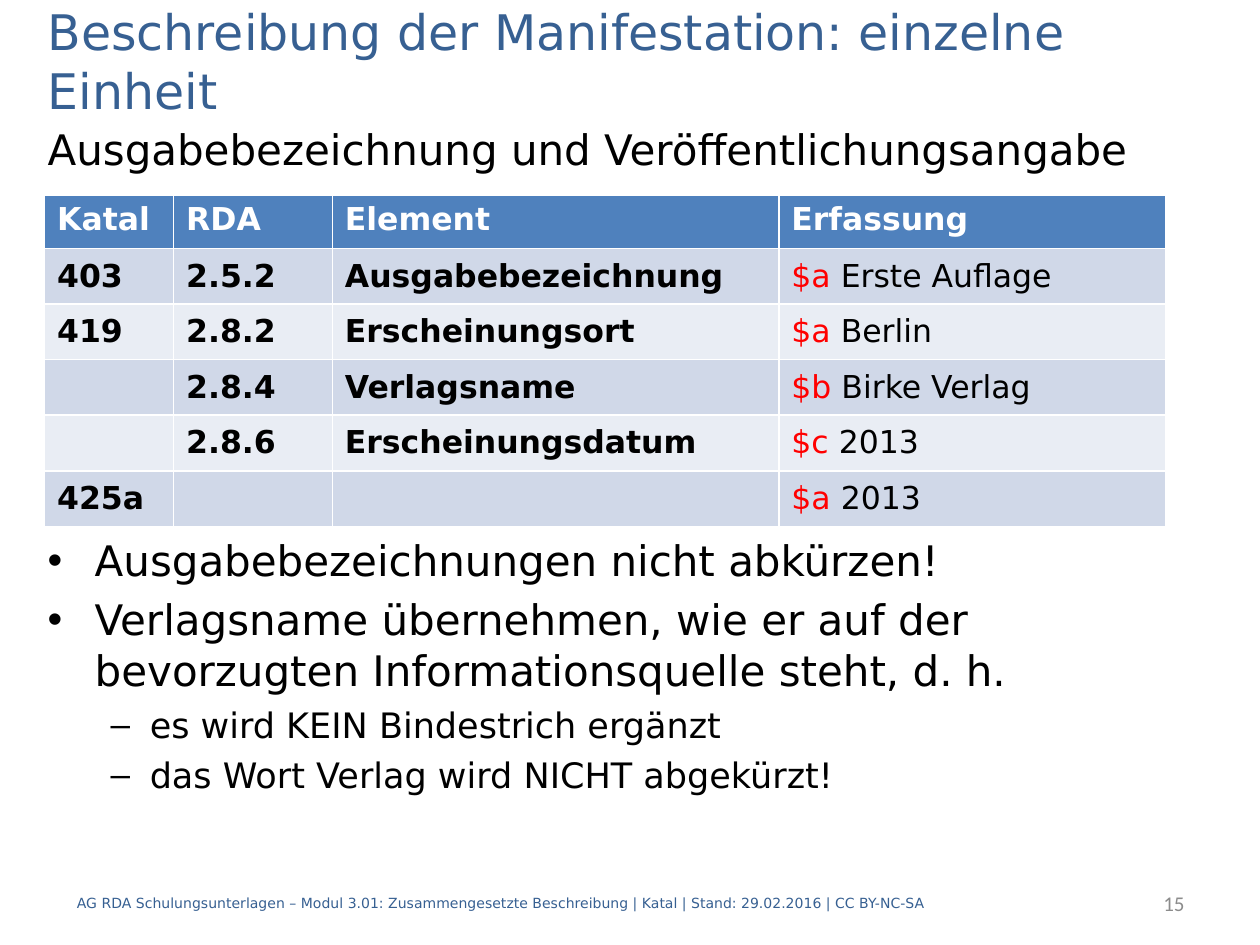
"""Build the slide on edition statement and publication statement."""
from dataclasses import dataclass

from lxml.etree import SubElement
from pptx import Presentation
from pptx.dml.color import RGBColor
from pptx.enum.text import MSO_ANCHOR, MSO_AUTO_SIZE, PP_ALIGN
from pptx.oxml.ns import qn
from pptx.util import Cm, Pt

FONT = "DejaVu Sans"
BLUE, BLACK, WHITE, RED, GREY = "376092", "000000", "FFFFFF", "FF0000", "8C8C8C"
HEADER_FILL, BAND_FILLS = "4F81BD", ("D0D8E8", "E9EDF4")


@dataclass(frozen=True)
class Box:
    """Place and size in centimetres."""
    left: float
    top: float
    width: float
    height: float

    def lengths(self) -> tuple:
        """Return the four values as lengths."""
        return Cm(self.left), Cm(self.top), Cm(self.width), Cm(self.height)


@dataclass(frozen=True)
class Bullet:
    """One list entry with its sign, size and indents in centimetres."""
    text: str
    sign: str = "•"
    size: int = 24
    margin: float = 0.95
    hanging: float = 0.95


@dataclass(frozen=True)
class Entry:
    """One table row; the subfield code precedes the recorded value."""
    field: str
    rule: str
    element: str
    code: str
    value: str


HEADINGS = ("Katal", "RDA", "Element", "Erfassung")
ENTRIES = (
    Entry("403", "2.5.2", "Ausgabebezeichnung", "$a", "Erste Auflage"),
    Entry("419", "2.8.2", "Erscheinungsort", "$a", "Berlin"),
    Entry("", "2.8.4", "Verlagsname", "$b", "Birke Verlag"),
    Entry("", "2.8.6", "Erscheinungsdatum", "$c", "2013"),
    Entry("425a", "", "", "$a", "2013"),
)
DASH = {"sign": "–", "size": 20, "margin": 2.06, "hanging": 0.79}
BULLETS = (
    Bullet("Ausgabebezeichnungen nicht abkürzen!"),
    Bullet("Verlagsname übernehmen, wie er auf der bevorzugten "
           "Informationsquelle steht, d. h."),
    Bullet("es wird KEIN Bindestrich ergänzt", **DASH),
    Bullet("das Wort Verlag wird NICHT abgekürzt!", **DASH),
)


def color(hex_value: str) -> RGBColor:
    """Turn a hex string into a colour."""
    return RGBColor.from_string(hex_value)


def write(paragraph, text: str, *, size=24, hue=BLACK, bold=False, font=FONT,
          align=PP_ALIGN.LEFT) -> None:
    """Append formatted text to a paragraph."""
    paragraph.alignment = align
    run = paragraph.add_run()
    run.text = text
    run.font.size = Pt(size)
    run.font.name = font
    run.font.bold = bold
    run.font.color.rgb = color(hue)


def add_frame(slide, box: Box, anchor=MSO_ANCHOR.TOP):
    """Add a wrapping text box and return its text frame."""
    frame = slide.shapes.add_textbox(*box.lengths()).text_frame
    frame.word_wrap = True
    frame.vertical_anchor = anchor
    return frame


def add_title(slide, text: str, box: Box) -> None:
    """Place and fill the title placeholder."""
    title = slide.shapes.title
    title.left, title.top, title.width, title.height = box.lengths()
    title.text_frame.auto_size = MSO_AUTO_SIZE.NONE
    title.text_frame.vertical_anchor = MSO_ANCHOR.MIDDLE
    write(title.text_frame.paragraphs[0], text, size=28, hue=BLUE)


def add_bullets(slide, bullets: tuple[Bullet, ...], box: Box) -> None:
    """Add a bulleted list."""
    frame = add_frame(slide, box)
    for index, bullet in enumerate(bullets):
        paragraph = frame.add_paragraph() if index else frame.paragraphs[0]
        paragraph.space_before = Pt(5 if index else 0)
        write(paragraph, bullet.text, size=bullet.size)
        properties = paragraph._p.get_or_add_pPr()
        properties.set("marL", str(Cm(bullet.margin)))
        properties.set("indent", str(-Cm(bullet.hanging)))
        SubElement(properties, qn("a:buFont")).set("typeface", "Arial")
        SubElement(properties, qn("a:buChar")).set("char", bullet.sign)


def fill_cell(cell, hue: str, anchor=MSO_ANCHOR.MIDDLE):
    """Fill a cell and return its first paragraph."""
    cell.fill.solid()
    cell.fill.fore_color.rgb = color(hue)
    cell.vertical_anchor = anchor
    return cell.text_frame.paragraphs[0]


def add_entries(slide, entries: tuple[Entry, ...], box: Box) -> None:
    """Add the table of recorded elements."""
    table = slide.shapes.add_table(
        len(entries) + 1, len(HEADINGS), *box.lengths()).table
    for column, width in zip(table.columns, (2.6, 3.2, 9, 7.8)):
        column.width = Cm(width)
    for index, row in enumerate(table.rows):
        row.height = Cm(1.12 if index else 1.08)
    for column, heading in enumerate(HEADINGS):
        paragraph = fill_cell(table.cell(0, column), HEADER_FILL, MSO_ANCHOR.TOP)
        write(paragraph, heading, size=18, hue=WHITE, bold=True)
    for index, entry in enumerate(entries):
        band = BAND_FILLS[index % 2]
        *labels, recorded = [fill_cell(cell, band)
                             for cell in table.rows[index + 1].cells]
        for paragraph, label in zip(labels, (entry.field, entry.rule, entry.element)):
            if label:
                write(paragraph, label, size=18, bold=True)
        write(recorded, f"{entry.code} ", size=18, hue=RED)
        write(recorded, entry.value, size=18)


def main() -> None:
    """Build and save the slide."""
    deck = Presentation()
    deck.slide_width, deck.slide_height = Cm(25.4), Cm(19.05)
    slide = deck.slides.add_slide(deck.slide_layouts[5])

    add_title(slide, "Beschreibung der Manifestation: einzelne Einheit",
              Box(0.71, 0.5, 24, 1.43))
    subtitle = add_frame(slide, Box(0.71, 2.37, 24, 1.2))
    write(subtitle.paragraphs[0], "Ausgabebezeichnung und Veröffentlichungsangabe")
    add_entries(slide, ENTRIES, Box(0.9, 3.93, 22.6, 6.68))
    add_bullets(slide, BULLETS, Box(0.71, 10.65, 24, 6.88))

    footer = add_frame(slide, Box(1.3, 17.7, 22, 1.02), MSO_ANCHOR.MIDDLE)
    write(footer.paragraphs[0],
          "AG RDA Schulungsunterlagen – Modul 3.01: Zusammengesetzte Beschreibung"
          " | Katal | Stand: 29.02.2016 | CC BY-NC-SA", size=8, hue=BLUE)
    number = add_frame(slide, Box(20.1, 17.7, 4.03, 1.02), MSO_ANCHOR.MIDDLE)
    write(number.paragraphs[0], "15", size=12, hue=GREY, font="Calibri",
          align=PP_ALIGN.RIGHT)
    deck.save("out.pptx")


if __name__ == "__main__":
    main()
